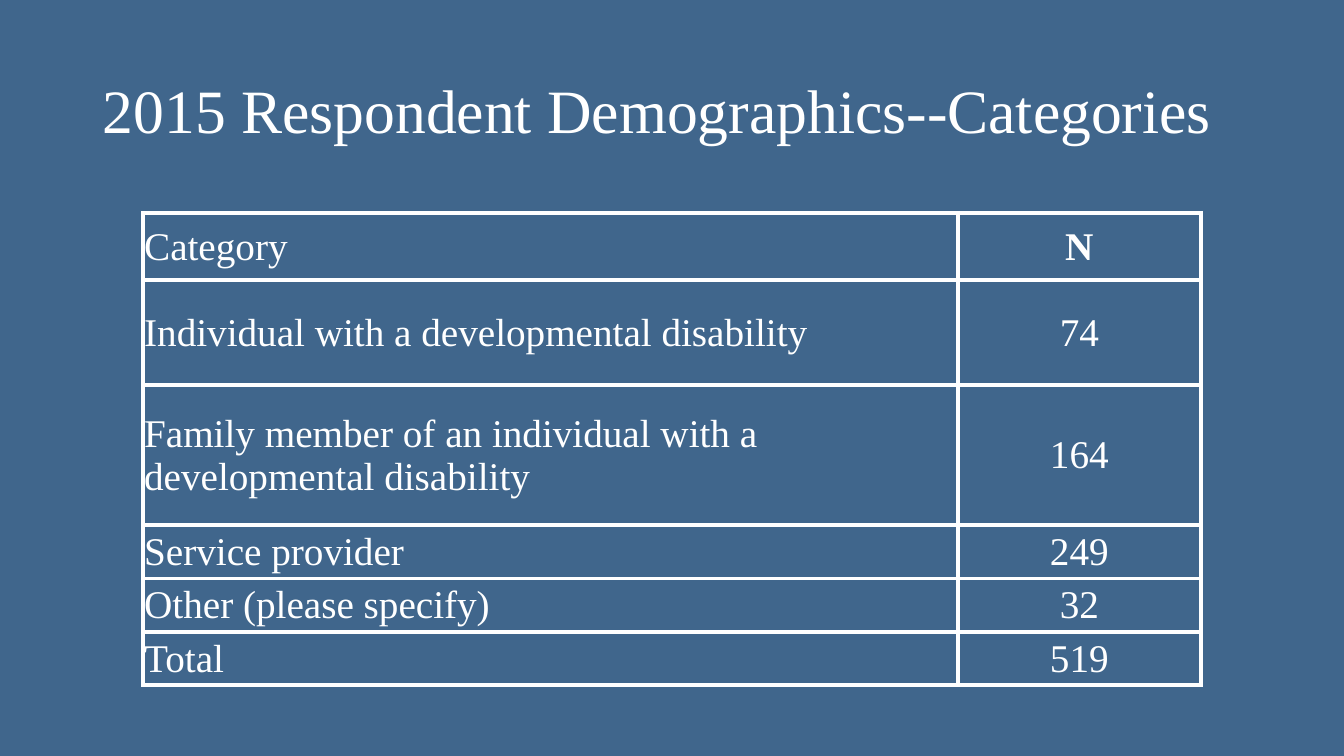
from lxml.etree import SubElement
from pptx import Presentation
from pptx.dml.color import RGBColor
from pptx.enum.text import MSO_ANCHOR, PP_ALIGN
from pptx.oxml.ns import qn
from pptx.util import Inches, Pt

TITLE = "2015 Respondent Demographics--Categories"
ROWS = [  # category, count, row height
    ("Category", "N", 0.67),
    ("Individual with a developmental disability", "74", 1.04),
    ("Family member of an individual with a developmental disability", "164", 1.39),
    ("Service provider", "249", 0.53),
    ("Other (please specify)", "32", 0.53),
    ("Total", "519", 0.53),
]
COLUMN_WIDTHS = (8.08, 2.41)
COLORS = {"background": "40668C", "white": "FFFFFF"}
FONT = "Times New Roman"


def style_paragraph(paragraph, size, bold=False):
    paragraph.font.name = FONT
    paragraph.font.size = Pt(size)
    paragraph.font.bold = bold
    paragraph.font.color.rgb = RGBColor.from_string(COLORS["white"])


def add_borders(cell, width):
    properties = cell._tc.get_or_add_tcPr()
    for position, side in enumerate(("lnL", "lnR", "lnT", "lnB")):
        line = properties.makeelement(qn(f"a:{side}"), {"w": str(Pt(width))})
        fill = SubElement(line, qn("a:solidFill"))
        SubElement(fill, qn("a:srgbClr"), val=COLORS["white"])
        properties.insert(position, line)


presentation = Presentation()
presentation.slide_width = Inches(13.33)
presentation.slide_height = Inches(7.5)
slide = presentation.slides.add_slide(presentation.slide_layouts[6])
slide.background.fill.solid()
slide.background.fill.fore_color.rgb = RGBColor.from_string(COLORS["background"])

# Title
title = slide.shapes.add_textbox(Inches(0.92), Inches(0.4), Inches(11.5), Inches(1.45))
title.text_frame.word_wrap = True
title.text_frame.vertical_anchor = MSO_ANCHOR.MIDDLE
paragraph = title.text_frame.paragraphs[0]
paragraph.text = TITLE
paragraph.line_spacing = 0.9
style_paragraph(paragraph, 44)

# Category table
table = slide.shapes.add_table(
    len(ROWS), len(COLUMN_WIDTHS), Inches(1.42), Inches(2.11),
    Inches(sum(COLUMN_WIDTHS)), Inches(sum(row[-1] for row in ROWS)),
).table
table.first_row = False
table.horz_banding = False
for column, width in zip(table.columns, COLUMN_WIDTHS):
    column.width = Inches(width)

for row_index, (category, count, height) in enumerate(ROWS):
    table.rows[row_index].height = Inches(height)
    for column_index, text in enumerate((category, count)):
        cell = table.cell(row_index, column_index)
        cell.fill.background()
        cell.vertical_anchor = MSO_ANCHOR.MIDDLE
        cell.margin_left = cell.margin_right = cell.margin_top = Inches(0.01)
        cell.margin_bottom = 0
        paragraph = cell.text_frame.paragraphs[0]
        paragraph.text = text
        paragraph.alignment = PP_ALIGN.CENTER if column_index else PP_ALIGN.LEFT
        style_paragraph(paragraph, 28, bold=text == "N")
        add_borders(cell, 3)

presentation.save("out.pptx")
